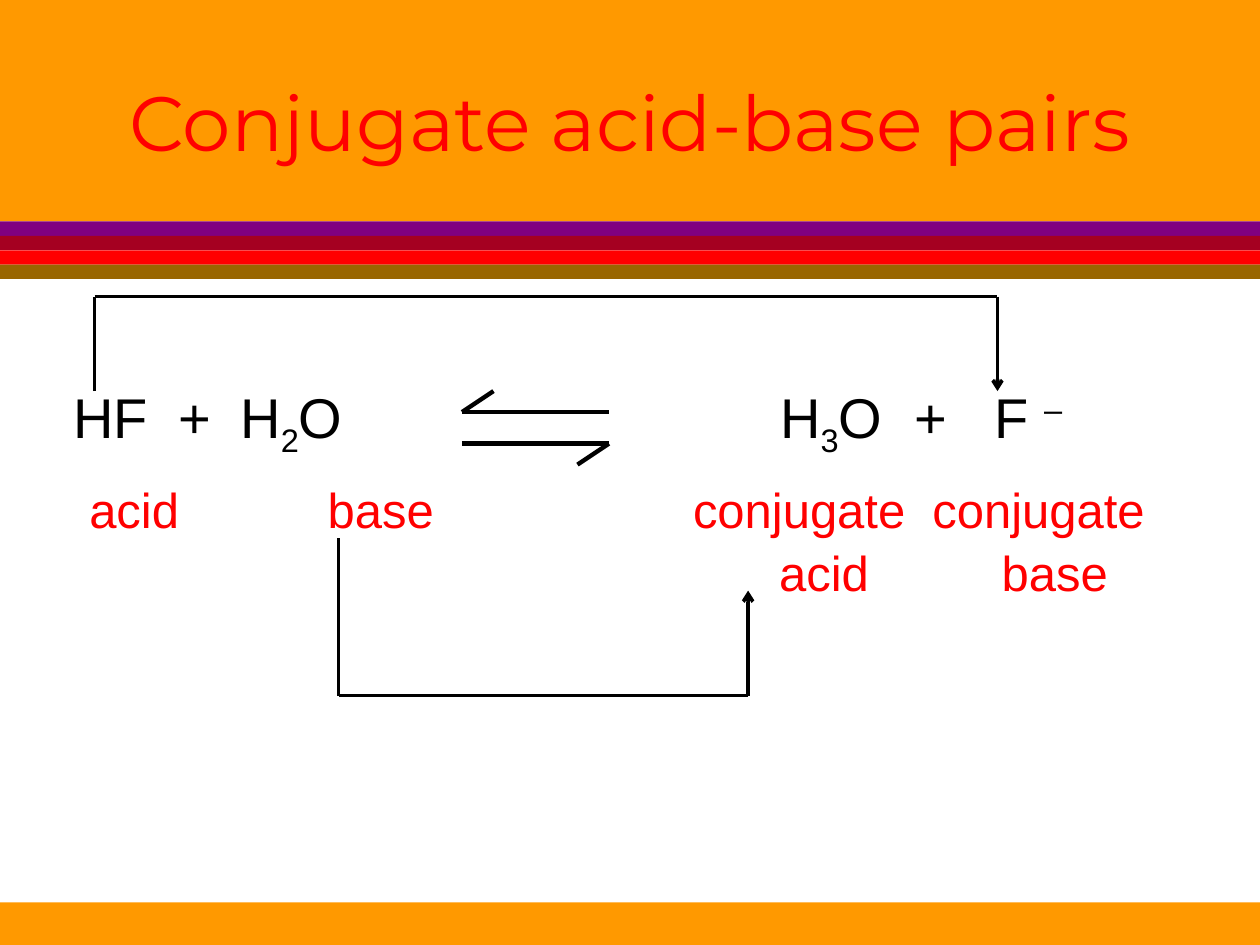
from lxml import etree
from pptx import Presentation, util as u
from pptx.dml.color import RGBColor
from pptx.enum import shapes, text
from pptx.oxml.ns import qn

COLUMNS, ROWS = 120, 90
CELL = u.Inches(10) // COLUMNS
BLACK, RED, ORANGE = "000000", "FF0000", "FF9900"


def cells(*counts):
    return [u.Emu(round(count * CELL)) for count in counts]


def color(value):
    return RGBColor.from_string(value)


def add_band(page, top, height, fill):
    band = page.shapes.add_shape(
        shapes.MSO_SHAPE.RECTANGLE, *cells(0, top, COLUMNS, height))
    band.shadow.inherit = False
    band.fill.solid()
    band.fill.fore_color.rgb = color(fill)
    band.line.fill.background()


def add_box(page, left, top, width, height, anchor):
    frame = page.shapes.add_textbox(*cells(left, top, width, height)).text_frame
    frame.word_wrap = True
    frame.vertical_anchor = anchor
    frame.margin_left = frame.margin_right = 0
    frame.margin_top = frame.margin_bottom = 0
    return frame


def add_span(para, words, size, fill, font="Arial", baseline=0):
    span = para.add_run()
    span.text = words
    span.font.name = font
    span.font.size = u.Pt(size)
    span.font.color.rgb = color(fill)
    if baseline:
        span.font._element.set("baseline", str(baseline * 1000))


def add_tab_stops(para, stops):
    tabs = etree.SubElement(para._p.get_or_add_pPr(), qn("a:tabLst"))
    for stop in cells(*stops):
        etree.SubElement(tabs, qn("a:tab"), pos=str(stop), algn="l")


def add_row(para, spans, stops, size, fill, before=0):
    para.space_before = u.Pt(before)
    add_tab_stops(para, stops)
    for words, baseline in spans:
        add_span(para, words, size, fill, baseline=baseline)


def add_path(page, points, width, arrow=False):
    legs = list(zip(points, points[1:]))
    for leg, (start, end) in enumerate(legs, 1):
        line = page.shapes.add_connector(
            shapes.MSO_CONNECTOR.STRAIGHT, *cells(*start, *end))
        line.line.color.rgb = color(BLACK)
        line.line.width = u.Pt(width)
        if arrow and leg == len(legs):
            etree.SubElement(line.line._get_or_add_ln(), qn("a:tailEnd"), type="arrow")
        etree.SubElement(line._element.spPr, qn("a:effectLst"))


def add_background(page):
    page.background.fill.solid()
    page.background.fill.fore_color.rgb = color("969696")
    add_band(page, 18, 72, "FFFFFF")
    add_band(page, 85.95, ROWS - 85.95, ORANGE)
    add_band(page, 0, 21.1, ORANGE)
    stripe = 1.37
    for index, fill in enumerate(["800080", "A50021", RED, "996600"]):
        add_band(page, 21.1 + index * stripe, stripe, fill)


def add_title(page):
    para = add_box(page, 9, 4, 102, 15, text.MSO_ANCHOR.MIDDLE).paragraphs[0]
    para.alignment = text.PP_ALIGN.CENTER
    add_span(para, "Conjugate acid-base pairs", 44, RED, "Montserrat")


def add_equation(page):
    frame = add_box(page, 7, 36.4, 110, 22, text.MSO_ANCHOR.TOP)
    formula = [("HF\t+\tH", 0), ("2", -25), ("O\tH", 0), ("3", -25),
               ("O\t+\tF ", 0), ("–", 30)]
    add_row(frame.paragraphs[0], formula, [10, 15.9, 67.3, 80.1, 87.7], 32, BLACK)
    add_row(frame.add_paragraph(), [("\tacid\tbase\tconjugate\tconjugate", 0)],
            [1.5, 24.2, 59, 81.8], 28, RED, 12)
    add_row(frame.add_paragraph(), [("\tacid\tbase", 0)], [67.2, 88.4], 28, RED, 2)


def main():
    deck = Presentation()
    deck.slide_width, deck.slide_height = cells(COLUMNS, ROWS)
    page = deck.slides.add_slide(deck.slide_layouts[6])
    add_background(page)
    add_title(page)
    add_equation(page)
    add_path(page, [(58, 39.25), (44, 39.25), (47, 37.25)], 2.5)
    add_path(page, [(44, 42.25), (58, 42.25), (55, 44.25)], 2.5)
    add_path(page, [(9, 37.25), (9, 28.25), (95, 28.25), (95, 37.25)], 2, True)
    add_path(page, [(32.25, 51.25), (32.25, 66.25), (71.25, 66.25), (71.25, 56.25)],
             2, True)
    deck.save("out.pptx")


if __name__ == "__main__":
    main()
